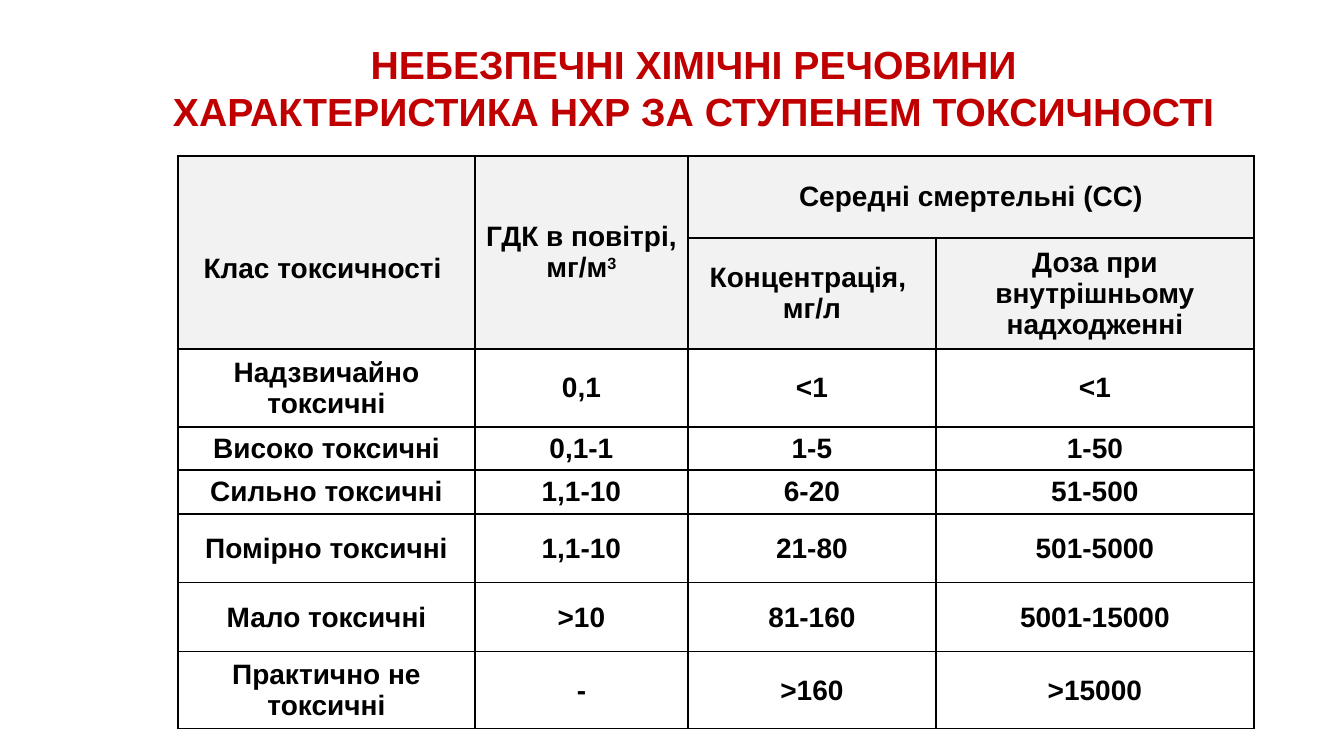
from lxml.etree import SubElement
from pptx import Presentation
from pptx.dml.color import RGBColor
from pptx.enum.text import MSO_ANCHOR, MSO_AUTO_SIZE, PP_ALIGN
from pptx.oxml.ns import qn
from pptx.util import Emu, Pt

HEADER_ROWS = 2
COLUMN_WIDTHS = [297, 213, 248, 318]
ROW_HEIGHTS = [82, 111, 78, 43, 44, 69, 69, 77]
# None marks a cell covered by a merged one; "^" starts a superscript
ROWS = [
    ["Клас токсичності ", "ГДК в повітрі, мг/м^3", "Середні смертельні (CC)", None],
    [None, None, "Концентрація, \nмг/л", "Доза при внутрішньому надходженні"],
    ["Надзвичайно токсичні", "0,1", "<1", "<1"],
    ["Високо токсичні", "0,1-1", "1-5", "1-50"],
    ["Сильно токсичні", "1,1-10", "6-20", "51-500"],
    ["Помірно токсичні", "1,1-10", "21-80", "501-5000"],
    ["Мало токсичні", ">10", "81-160", "5001-15000"],
    ["Практично не токсичні", "-", ">160", ">15000"],
]
MERGES = [((0, 0), (1, 0)), ((0, 1), (1, 1)), ((0, 2), (0, 3))]


def px(length):
    return Emu(round(length * 914400 / 100.8))


def color(value):
    return RGBColor.from_string(value)


class ToxicitySlide:
    font = "Arial"
    title_color, text_color, border_color = "C00000", "000000", "000000"
    header_fill, body_fill = "F2F2F2", "FFFFFF"

    def __init__(self, presentation):
        self.slide = presentation.slides.add_slide(presentation.slide_layouts[5])

    def format_text(self, text_frame, size, text_color):
        for paragraph in text_frame.paragraphs:
            paragraph.alignment = PP_ALIGN.CENTER
            for run in paragraph.runs:
                run.font.name = self.font
                run.font.size = Pt(size)
                run.font.bold = True
                run.font.color.rgb = color(text_color)

    def title(self, text, left, top, width, height):
        shape = self.slide.shapes.title
        shape.left, shape.top = px(left), px(top)
        shape.width, shape.height = px(width), px(height)
        text_frame = shape.text_frame
        text_frame.text = text
        text_frame.word_wrap = True
        text_frame.auto_size = MSO_AUTO_SIZE.NONE
        text_frame.vertical_anchor = MSO_ANCHOR.MIDDLE
        self.format_text(text_frame, 28, self.title_color)

    def borders(self, cell):
        properties = cell._tc.get_or_add_tcPr()
        for side in ("lnL", "lnR", "lnT", "lnB"):
            line = SubElement(properties, qn(f"a:{side}"), w=str(Pt(1)))
            fill = SubElement(line, qn("a:solidFill"))
            SubElement(fill, qn("a:srgbClr"), val=self.border_color)

    def cell(self, cell, text, fill):
        self.borders(cell)
        cell.fill.solid()
        cell.fill.fore_color.rgb = color(fill)
        cell.vertical_anchor = MSO_ANCHOR.MIDDLE
        cell.margin_left = cell.margin_right = px(7)
        cell.margin_top = cell.margin_bottom = px(4)
        if text is None:
            return
        base, _, superscript = text.partition("^")
        cell.text_frame.text = base
        if superscript:
            run = cell.text_frame.paragraphs[-1].add_run()
            run.text = superscript
            run._r.get_or_add_rPr().set("baseline", "30000")
        self.format_text(cell.text_frame, 20, self.text_color)

    def table(self, left, top):
        frame = self.slide.shapes.add_table(
            len(ROWS), len(COLUMN_WIDTHS), px(left), px(top),
            px(sum(COLUMN_WIDTHS)), px(sum(ROW_HEIGHTS)))
        table = frame.table
        table.horz_banding = False
        for column, width in zip(table.columns, COLUMN_WIDTHS):
            column.width = px(width)
        for row, height in zip(table.rows, ROW_HEIGHTS):
            row.height = px(height)
        for first, last in MERGES:
            table.cell(*first).merge(table.cell(*last))
        for row_index, texts in enumerate(ROWS):
            fill = self.header_fill if row_index < HEADER_ROWS else self.body_fill
            for column_index, text in enumerate(texts):
                self.cell(table.cell(row_index, column_index), text, fill)
        # The class heading sits one half line below the middle
        table.cell(0, 0).margin_top = px(36)


def main():
    presentation = Presentation()
    presentation.slide_width, presentation.slide_height = px(1344), px(756)
    slide = ToxicitySlide(presentation)

    # Heading
    slide.title("НЕБЕЗПЕЧНІ ХІМІЧНІ РЕЧОВИНИ\n"
                "ХАРАКТЕРИСТИКА НХР ЗА СТУПЕНЕМ ТОКСИЧНОСТІ", 133, 35, 1121, 105)

    # Toxicity classes
    slide.table(178, 156)

    presentation.save("out.pptx")


if __name__ == "__main__":
    main()
